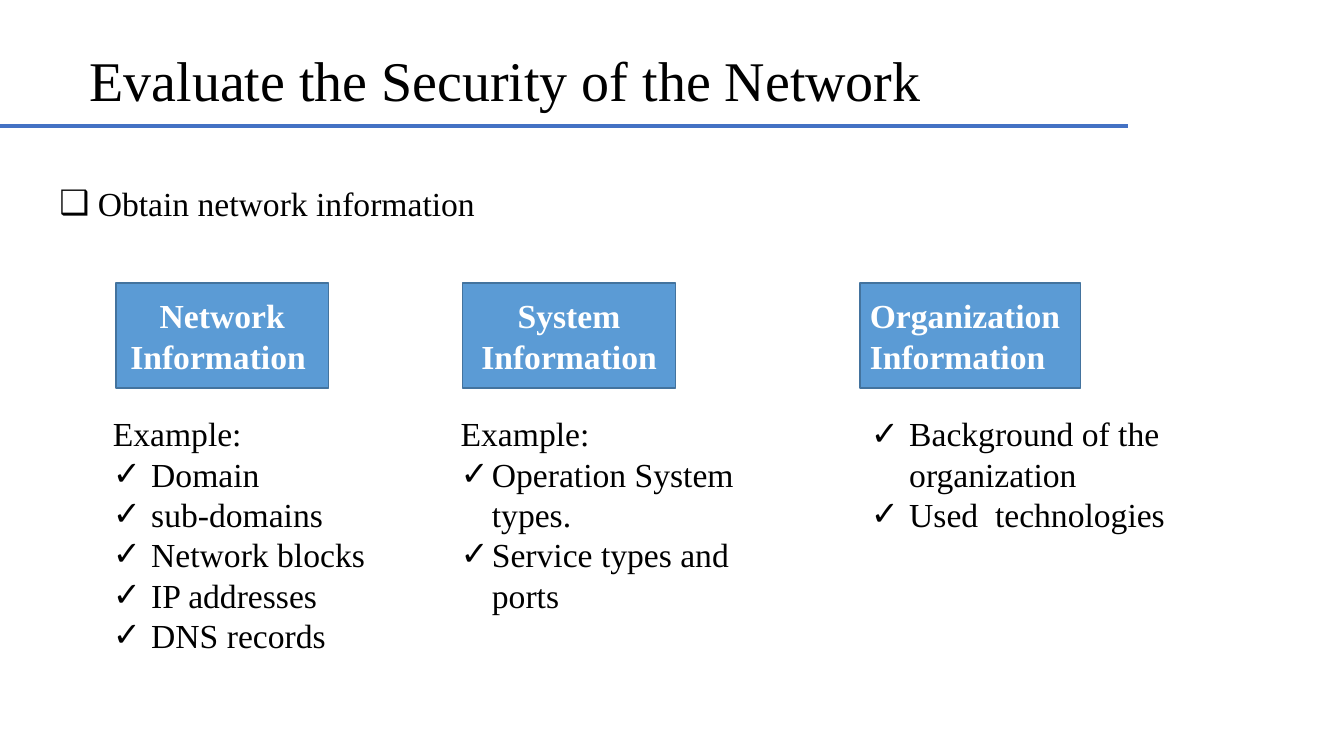
import pptx
import pptx.dml.color
import pptx.enum.shapes
import pptx.enum.text
import pptx.oxml
import pptx.oxml.ns
import pptx.util

Inches, Pt = pptx.util.Inches, pptx.util.Pt
ALIGN = pptx.enum.text.PP_ALIGN
ANCHOR = pptx.enum.text.MSO_ANCHOR

SLIDE_WIDTH, SLIDE_HEIGHT = Inches(13.33), Inches(7.5)
COLUMNS, ROWS = 40, 30
COLORS = {"text": "000000", "rule": "4472C4", "heading": "5B9BD5",
          "border": "43739E", "heading_text": "FFFFFF"}
FONT = "Times New Roman"
CHECK, SQUARE = "✓", "❑"
HEADING_TOP, HEADING_ROWS, LIST_TOP = 11.24, 4.16, 16.2

# Boxes are (column, row, columns wide, rows high) on the grid.
TITLE_BOX = (2.37, 1.6, 29, 3.4)
TASK_BOX = (1.47, 7.04, 37.1, 2)
TOPICS = [
    {"heading": "Network Information ", "align": ALIGN.CENTER,
     "box": (3.45, HEADING_TOP, 6.33, HEADING_ROWS),
     "list_box": (3.06, LIST_TOP, 8.16, 10.08), "intro": "Example:", "indent": 0.38,
     "items": ["Domain", "sub-domains", "Network blocks", "IP addresses", "DNS records"]},
    {"heading": "System Information", "align": ALIGN.CENTER,
     "box": (13.77, HEADING_TOP, 6.33, HEADING_ROWS),
     "list_box": (13.41, LIST_TOP, 8.85, 9.68), "intro": "Example:", "indent": 0.31,
     "items": ["Operation System types.", "Service types and ports"]},
    {"heading": "Organization Information", "align": ALIGN.LEFT,
     "box": (25.59, HEADING_TOP, 6.57, HEADING_ROWS),
     "list_box": (25.62, LIST_TOP, 13.35, 5.24), "intro": None, "indent": 0.38,
     "items": ["Background of the organization", "Used  technologies"]},
]


def rgb(name):
    return pptx.dml.color.RGBColor.from_string(COLORS[name])


def grid(column, row, width, height):
    across, down = SLIDE_WIDTH / COLUMNS, SLIDE_HEIGHT / ROWS
    return [int(length) for length in
            (column * across, row * down, width * across, height * down)]


def apply(target, formats):
    for attribute, value in formats.items():
        setattr(target, attribute, value)


def place(placeholder, box, anchor):
    apply(placeholder, dict(zip(("left", "top", "width", "height"), grid(*box))))
    apply(placeholder.text_frame, {
        "word_wrap": True, "vertical_anchor": anchor,
        "auto_size": pptx.enum.text.MSO_AUTO_SIZE.NONE})


def write(paragraph, text, size=24, color="text", bold=False, align=ALIGN.LEFT, spacing=1.0):
    run = paragraph.add_run()
    run.text = text
    apply(run.font, {"name": FONT, "size": Pt(size), "bold": bold})
    run.font.color.rgb = rgb(color)
    apply(paragraph, {"alignment": align, "line_spacing": spacing, "space_before": Pt(0)})


def set_bullet(paragraph, symbol, indent):
    """Hang the paragraph on a symbol, or set it flush left without one."""
    properties = paragraph._p.get_or_add_pPr()
    margin = Inches(indent) if symbol else 0
    properties.set("marL", str(margin))
    properties.set("indent", str(-margin))
    bullet = pptx.oxml.parse_xml(
        f'<a:{"buChar" if symbol else "buNone"} {pptx.oxml.ns.nsdecls("a")}/>')
    if symbol:
        bullet.set("char", symbol)
    properties.append(bullet)


def fill_list(placeholder, box, entries, indent):
    """Write (symbol, text) entries into a body placeholder."""
    place(placeholder, box, ANCHOR.TOP)
    frame = placeholder.text_frame
    for number, (symbol, text) in enumerate(entries):
        paragraph = frame.add_paragraph() if number else frame.paragraphs[0]
        write(paragraph, text)
        set_bullet(paragraph, symbol, indent)


def add_title(slide, box):
    title = slide.shapes.title
    place(title, box, ANCHOR.MIDDLE)
    write(title.text_frame.paragraphs[0], "Evaluate the Security of the Network",
          size=40, spacing=0.9)
    column, row, width, height = box
    left, top, right, _ = grid(0, row + height, column + width + 2.2, 0)
    rule = slide.shapes.add_connector(
        pptx.enum.shapes.MSO_CONNECTOR.STRAIGHT, right, top, left, top)
    rule.line.color.rgb = rgb("rule")
    rule.line.width = Pt(2.25)
    rule._element.spPr.append(
        pptx.oxml.parse_xml(f'<a:effectLst {pptx.oxml.ns.nsdecls("a")}/>'))


def add_topic(slide, body, topic):
    heading = slide.shapes.add_shape(
        pptx.enum.shapes.MSO_SHAPE.RECTANGLE, *grid(*topic["box"]))
    heading.shadow.inherit = False
    heading.fill.solid()
    heading.fill.fore_color.rgb = rgb("heading")
    heading.line.color.rgb = rgb("border")
    heading.line.width = Pt(1)
    apply(heading.text_frame, {"word_wrap": True, "vertical_anchor": ANCHOR.MIDDLE})
    write(heading.text_frame.paragraphs[0], topic["heading"],
          color="heading_text", bold=True, align=topic["align"])
    entries = [(None, topic["intro"])] if topic["intro"] else []
    entries += [(CHECK, item) for item in topic["items"]]
    fill_list(body, topic["list_box"], entries, topic["indent"])


def main():
    deck = pptx.Presentation()
    apply(deck, {"slide_width": SLIDE_WIDTH, "slide_height": SLIDE_HEIGHT})
    slide = deck.slides.add_slide(deck.slide_layouts.get_by_name("Comparison"))
    _, task, *topic_bodies = slide.placeholders
    add_title(slide, TITLE_BOX)
    fill_list(task, TASK_BOX, [(SQUARE, "Obtain network information")], 0.38)
    for body, topic in zip(topic_bodies, TOPICS):
        add_topic(slide, body, topic)
    deck.save("out.pptx")


if __name__ == "__main__":
    main()
